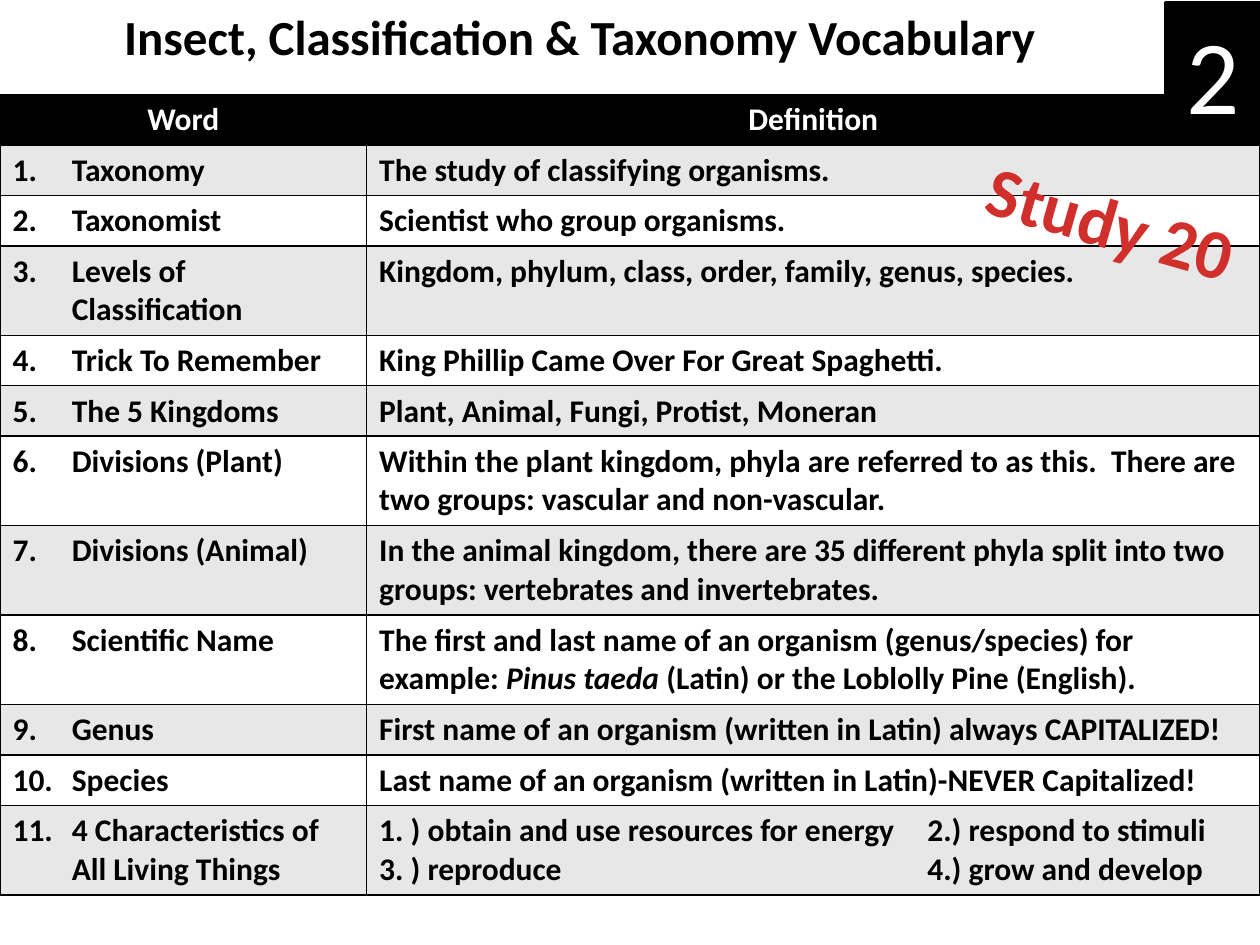
from lxml.etree import SubElement
from pptx import Presentation
from pptx.dml.color import RGBColor
from pptx.enum.shapes import MSO_SHAPE
from pptx.enum.text import MSO_ANCHOR, MSO_AUTO_SIZE, PP_ALIGN
from pptx.oxml.ns import qn
from pptx.util import Inches, Pt

COLORS = {"black": "000000", "white": "FFFFFF", "band": "E7E7E7", "red": "D02F2C"}
FONT = "Calibri"
TITLE = "Insect, Classification & Taxonomy Vocabulary"
HEADER = ("Word", "Definition")
ITALIC_PHRASE = "Pinus taeda"
# A vertical tab breaks a line; a tab moves to the indent or tab stop.
VOCABULARY = [
    ("Taxonomy", "The study of classifying organisms."),
    ("Taxonomist", "Scientist who group organisms."),
    ("Levels of\vClassification", "Kingdom, phylum, class, order, family, genus, species."),
    ("Trick To Remember", "King Phillip Came Over For Great Spaghetti."),
    ("The 5 Kingdoms", "Plant, Animal, Fungi, Protist, Moneran"),
    ("Divisions (Plant)", "Within the plant kingdom, phyla are referred to as this.  "
     "There are two groups: vascular and non-vascular."),
    ("Divisions (Animal)", "In the animal kingdom, there are 35 different phyla split "
     "into two groups: vertebrates and invertebrates."),
    ("Scientific Name", "The first and last name of an organism (genus/species) for "
     "example: Pinus taeda (Latin) or the Loblolly Pine (English)."),
    ("Genus", "First name of an organism (written in Latin) always CAPITALIZED!"),
    ("Species", "Last name of an organism (written in Latin)-NEVER Capitalized!"),
    ("4 Characteristics of\vAll Living Things",
     "1. ) obtain and use resources for energy\t2.) respond to stimuli\n"
     "3. ) reproduce\t4.) grow and develop"),
]
WIDTH, HEIGHT = 10, 7.5
COLUMNS = (2.91, 7.09)
TABLE_TOP, ROW_HEIGHT = 0.75, 0.4
WORD_INDENT, SECOND_ITEM_STOP = 0.47, 4.35


def rgb(name):
    return RGBColor.from_string(COLORS[name])


def box(left, top, width, height):
    return [Inches(value) for value in (left, top, width, height)]


def format_text(text_frame, size, color, bold=True, align=PP_ALIGN.CENTER):
    for paragraph in text_frame.paragraphs:
        paragraph.alignment = align
        for run in paragraph.runs:
            font = run.font
            font.name, font.size, font.bold = FONT, Pt(size), bold
            font.color.rgb = rgb(color)


def fit_on_one_line(text_frame):
    text_frame.word_wrap = False
    text_frame.auto_size = MSO_AUTO_SIZE.SHAPE_TO_FIT_TEXT


def add_borders(cell):
    properties = cell._tc.get_or_add_tcPr()
    for side in ("a:lnL", "a:lnR", "a:lnT", "a:lnB"):
        line = SubElement(properties, qn(side), w=str(Pt(1)))
        fill = SubElement(line, qn("a:solidFill"))
        SubElement(fill, qn("a:srgbClr"), val=COLORS["black"])


def hang_indent(paragraph, indent):
    properties = paragraph._p.get_or_add_pPr()
    properties.set("marL", str(Inches(indent)))
    properties.set("indent", str(-Inches(indent)))


def add_tab_stop(paragraph, position):
    stops = SubElement(paragraph._p.get_or_add_pPr(), qn("a:tabLst"))
    SubElement(stops, qn("a:tab"), pos=str(Inches(position)), algn="l")


def split_italic(paragraph):
    """Put the italic phrase of a paragraph in a run of its own."""
    before, phrase, after = paragraph.text.partition(ITALIC_PHRASE)
    if phrase:
        paragraph.text = before
        for text in (phrase, after):
            paragraph.add_run().text = text
        paragraph.runs[1].font.italic = True


def add_vocabulary(slide):
    rows = [HEADER] + [(f"{number}.\t{word}", definition)
                       for number, (word, definition) in enumerate(VOCABULARY, 1)]
    table = slide.shapes.add_table(
        len(rows), len(COLUMNS), *box(0, TABLE_TOP, WIDTH, ROW_HEIGHT * len(rows))).table
    for column, width in zip(table.columns, COLUMNS):
        column.width = Inches(width)
    for row_index, texts in enumerate(rows):
        lines = 2 if any("\v" in text or len(text) > 70 for text in texts) else 1
        table.rows[row_index].height = Inches(ROW_HEIGHT + 0.31 * (lines - 1))
        is_header = row_index == 0
        fill = "black" if is_header else ("white", "band")[row_index % 2]
        for column_index, text in enumerate(texts):
            cell = table.cell(row_index, column_index)
            cell.text_frame.text = text
            add_borders(cell)
            cell.fill.solid()
            cell.fill.fore_color.rgb = rgb(fill)
            for paragraph in cell.text_frame.paragraphs:
                split_italic(paragraph)
                if column_index == 0 and not is_header:
                    hang_indent(paragraph, WORD_INDENT)
                elif "\t" in paragraph.text:
                    add_tab_stop(paragraph, SECOND_ITEM_STOP)
            format_text(cell.text_frame, 18, "white" if is_header else "black",
                        align=PP_ALIGN.CENTER if is_header else PP_ALIGN.LEFT)


def add_title(slide):
    title = slide.shapes.title
    title.left, title.top, title.width, title.height = box(0.84, 0, 7.52, 0.57)
    title.text_frame.text = TITLE
    fit_on_one_line(title.text_frame)
    format_text(title.text_frame, 28, "black")


def add_page_badge(slide):
    badge = slide.shapes.add_shape(MSO_SHAPE.RECTANGLE, *box(WIDTH - 0.75, 0.02, 0.75, 1.11))
    badge.shadow.inherit = False
    badge.fill.solid()
    badge.fill.fore_color.rgb = badge.line.color.rgb = rgb("black")
    badge.line.width = Pt(2)
    badge.text_frame.text = "2"
    badge.text_frame.vertical_anchor = MSO_ANCHOR.MIDDLE
    format_text(badge.text_frame, 60, "white", bold=False)


def add_study_stamp(slide):
    stamp = slide.shapes.add_textbox(*box(7.71, 1.37, 2.22, 0.77))
    stamp.rotation = 16
    stamp.text_frame.text = "Study 20"
    fit_on_one_line(stamp.text_frame)
    format_text(stamp.text_frame, 40, "red")


def main():
    presentation = Presentation()
    presentation.slide_width, presentation.slide_height = Inches(WIDTH), Inches(HEIGHT)
    slide = presentation.slides.add_slide(presentation.slide_layouts.get_by_name("Title Only"))
    add_title(slide)
    add_vocabulary(slide)
    add_page_badge(slide)
    add_study_stamp(slide)
    presentation.save("out.pptx")


if __name__ == "__main__":
    main()
